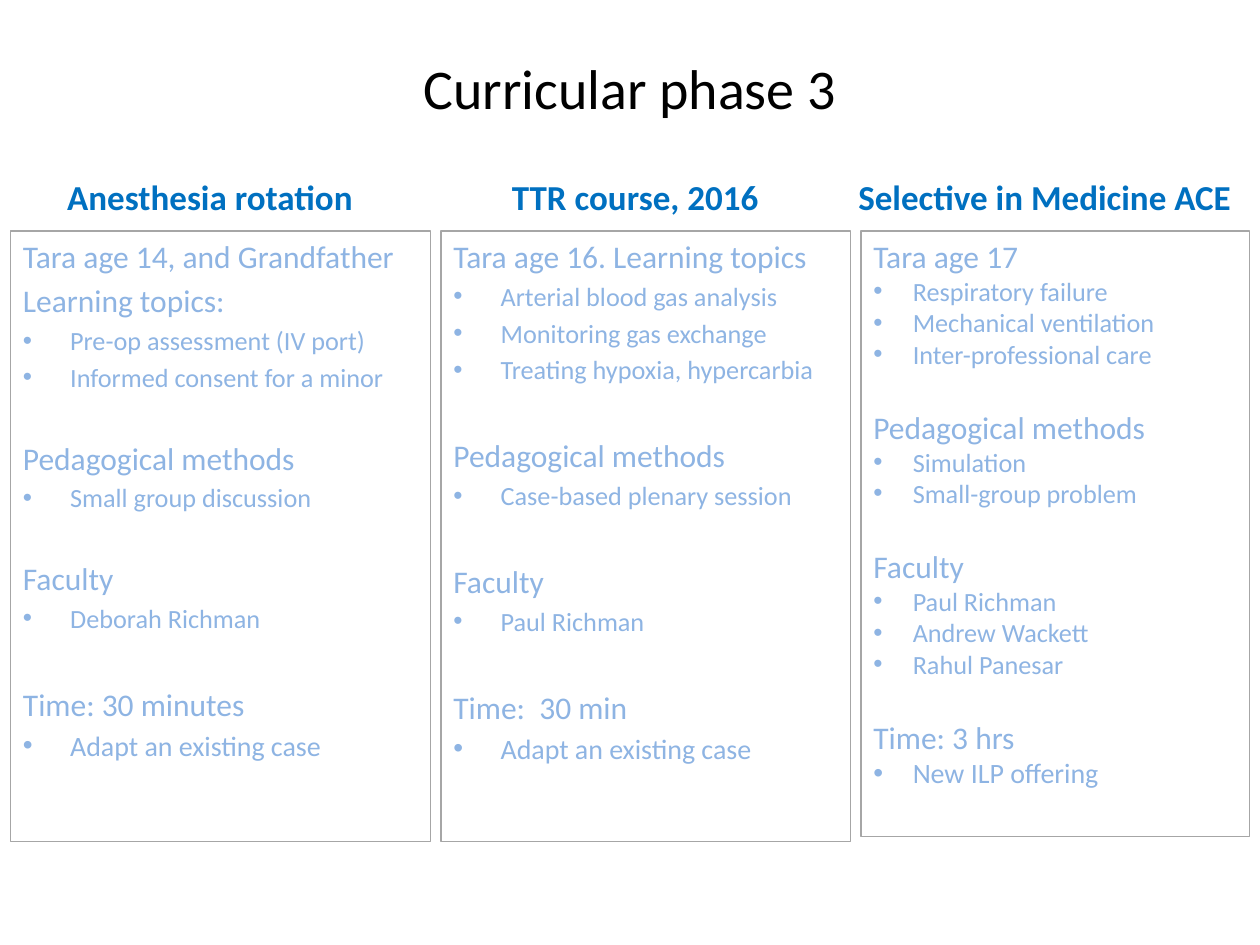
from dataclasses import dataclass

from lxml.etree import SubElement
from pptx import Presentation
from pptx.dml.color import RGBColor as RGB
from pptx.enum.shapes import MSO_SHAPE as Shape
from pptx.enum.text import MSO_ANCHOR as Anchor, PP_ALIGN as Align
from pptx.oxml.ns import qn
from pptx.util import Pt


@dataclass(frozen=True)
class Theme:
    font: str = "Calibri"
    title_color: RGB = RGB(0, 0, 0)
    heading_color: RGB = RGB(0x00, 0x70, 0xC0)
    body_color: RGB = RGB(0x8E, 0xB4, 0xE3)
    border_color: RGB = RGB(0xA6, 0xA6, 0xA6)
    title_size: float = 32
    heading_size: float = 20
    topic_size: float = 18
    item_size: float = 15
    note_size: float = 16


@dataclass(frozen=True)
class Box:
    left: float
    top: float
    width: float
    height: float

    def lengths(self):
        return [Pt(v) for v in (self.left, self.top, self.width, self.height)]


@dataclass(frozen=True)
class Course:
    heading: str
    width: float
    height: float
    spacing: float
    indent: float
    gaps: tuple
    sections: tuple


THEME = Theme()
COLUMN_LEFT, COLUMN_TOP, COLUMN_GAP = 6, 132, 6
HEADING_HEIGHT, HEADING_LIFT, HEADING_SHIFT = 50, 4, -6

COURSES = (
    Course("Anesthesia rotation", 240, 349, 0.2, 27, (0, 3.6, 26.3, 26.3, 29.2), (
        ("Tara age 14, and Grandfather", ()),
        ("Learning topics:", ("Pre-op assessment (IV port)", "Informed consent for a minor")),
        ("Pedagogical methods", ("Small group discussion",)),
        ("Faculty", ("Deborah Richman",)),
        ("Time: 30 minutes", ("Adapt an existing case",)),
    )),
    Course("TTR course, 2016", 234, 349, 0.2, 27, (0, 29.2, 29.2, 29.2), (
        ("Tara age 16. Learning topics", (
            "Arterial blood gas analysis", "Monitoring gas exchange",
            "Treating hypoxia, hypercarbia")),
        ("Pedagogical methods", ("Case-based plenary session",)),
        ("Faculty", ("Paul Richman",)),
        ("Time:  30 min", ("Adapt an existing case",)),
    )),
    Course("Selective in Medicine ACE", 222, 346, 0, 22.5, (0, 22, 22, 22), (
        ("Tara age 17", (
            "Respiratory failure", "Mechanical ventilation", "Inter-professional care")),
        ("Pedagogical methods", ("Simulation", "Small-group problem")),
        ("Faculty", ("Paul Richman", "Andrew Wackett", "Rahul Panesar")),
        ("Time: 3 hrs", ("New ILP offering",)),
    )),
)


def apply_format(target, values):
    for attribute, value in values.items():
        setattr(target, attribute, value)


def write_line(paragraph, text, size, color, bold=False, align=Align.LEFT, before=0):
    apply_format(paragraph, {"alignment": align, "space_before": Pt(before)})
    run = paragraph.add_run()
    run.text = text
    apply_format(run.font, {"name": THEME.font, "size": Pt(size), "bold": bold})
    run.font.color.rgb = color


def add_bullet(paragraph, indent):
    properties = paragraph._p.get_or_add_pPr()
    properties.set("marL", str(Pt(indent)))
    properties.set("indent", str(-Pt(indent)))
    SubElement(properties, qn("a:buFont"), typeface="Arial")
    SubElement(properties, qn("a:buChar"), char="•")


def place_title(slide, box, text):
    title = slide.shapes.title
    apply_format(title, dict(zip(("left", "top", "width", "height"), box.lengths())))
    title.text_frame.vertical_anchor = Anchor.MIDDLE
    write_line(title.text_frame.paragraphs[0], text, THEME.title_size,
               THEME.title_color, align=Align.CENTER)


def place_heading(slide, box, text):
    frame = slide.shapes.add_textbox(*box.lengths()).text_frame
    apply_format(frame, {"word_wrap": True, "vertical_anchor": Anchor.BOTTOM,
                         "margin_left": 0, "margin_right": 0})
    write_line(frame.paragraphs[0], text, THEME.heading_size,
               THEME.heading_color, bold=True, align=Align.CENTER)


def place_outline(slide, box, course):
    panel = slide.shapes.add_shape(Shape.RECTANGLE, *box.lengths())
    panel.shadow.inherit = False
    panel.fill.background()
    panel.line.color.rgb = THEME.border_color
    panel.line.width = Pt(0.75)
    frame = panel.text_frame
    apply_format(frame, {"word_wrap": True, "vertical_anchor": Anchor.TOP})
    paragraph = frame.paragraphs[0]
    last_topic = course.sections[-1][0]
    for (topic, items), gap in zip(course.sections, course.gaps):
        if paragraph.runs:
            paragraph = frame.add_paragraph()
        write_line(paragraph, topic, THEME.topic_size, THEME.body_color, before=gap)
        size = THEME.note_size if topic == last_topic else THEME.item_size
        for item in items:
            paragraph = frame.add_paragraph()
            write_line(paragraph, item, size, THEME.body_color,
                       before=size * course.spacing)
            add_bullet(paragraph, course.indent)


def place_courses(slide, left, top):
    for course in COURSES:
        heading_top = top - HEADING_LIFT - HEADING_HEIGHT
        place_heading(slide, Box(left + HEADING_SHIFT, heading_top,
                                 course.width, HEADING_HEIGHT), course.heading)
        place_outline(slide, Box(left, top, course.width, course.height), course)
        left += course.width + COLUMN_GAP


def main():
    deck = Presentation()
    apply_format(deck, {"slide_width": Pt(720), "slide_height": Pt(540)})
    slide = deck.slides.add_slide(deck.slide_layouts.get_by_name("Title Only"))
    place_title(slide, Box(36, 21.6, 648, 56), "Curricular phase 3")
    place_courses(slide, COLUMN_LEFT, COLUMN_TOP)
    deck.save("out.pptx")


if __name__ == "__main__":
    main()
